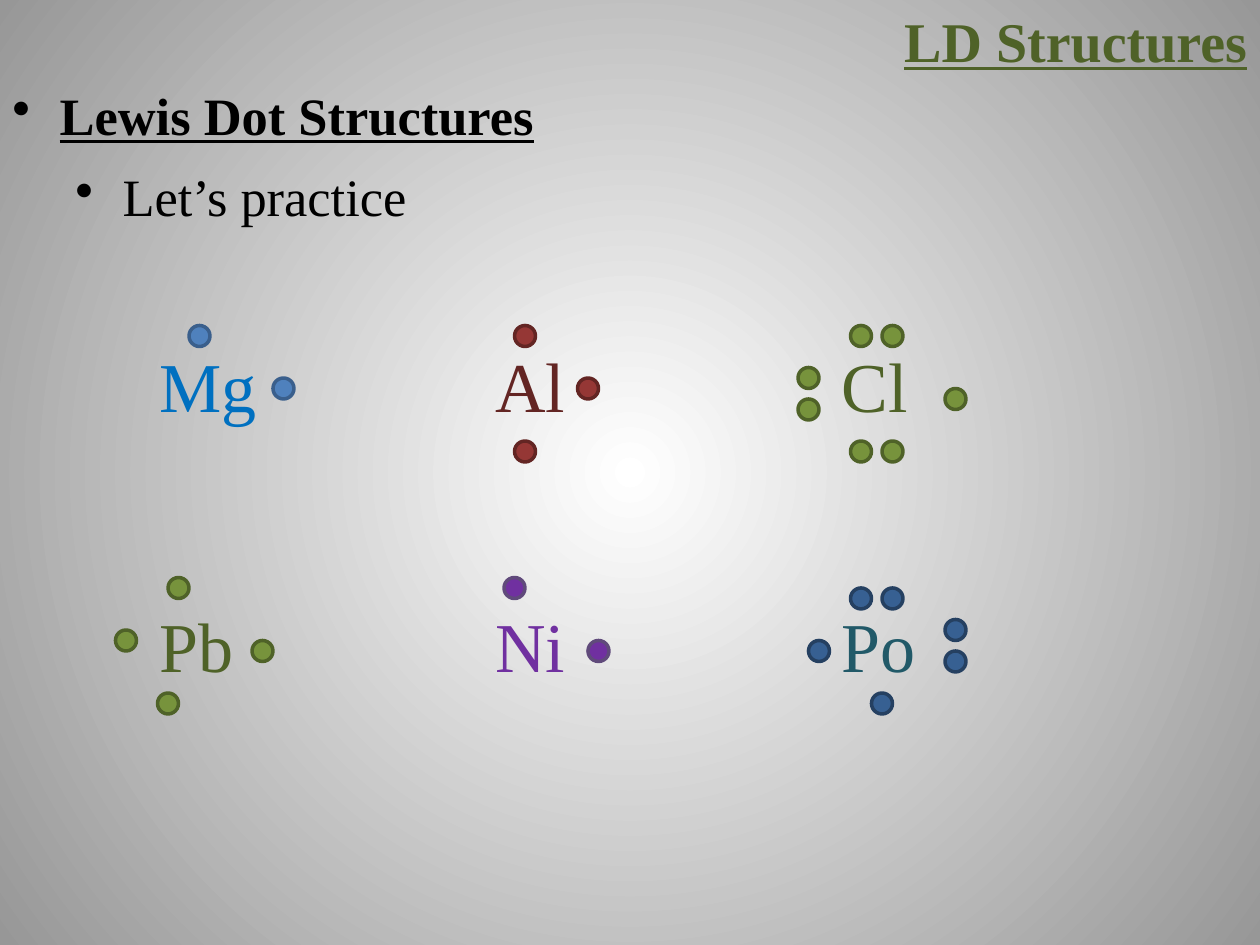
from lxml import etree
from pptx import Presentation
from pptx.dml.color import RGBColor
from pptx.enum.shapes import MSO_SHAPE
from pptx.enum.text import MSO_ANCHOR, MSO_AUTO_SIZE, PP_ALIGN
from pptx.oxml.ns import qn
from pptx.util import Pt

OVAL = MSO_SHAPE.OVAL
TOP = MSO_ANCHOR.TOP
RIGHT = PP_ALIGN.RIGHT
FIT_SHAPE = MSO_AUTO_SIZE.SHAPE_TO_FIT_TEXT

FONT = "Times New Roman"
GREEN = "4F6228"
DOT_SIZE = 12
ROW_1, ROW_2 = 192, 340.5
COLUMN_1, COLUMN_2, COLUMN_3 = 84, 276, 474


def color(hex_string):
    return RGBColor.from_string(hex_string)


def add_run(paragraph, text, size, hex_string, heading=False):
    run = paragraph.add_run()
    run.text = text
    run.font.name = FONT
    run.font.size = Pt(size)
    run.font.bold = heading
    run.font.underline = heading
    run.font.color.rgb = color(hex_string)


presentation = Presentation()
presentation.slide_width = Pt(720)
presentation.slide_height = Pt(540)
slide = presentation.slides.add_slide(presentation.slide_layouts[5])

# Background: circular gradient, white in the centre
background_fill = slide.background.fill
background_fill.gradient()
for stop, stop_color in zip(background_fill.gradient_stops, ("FFFFFF", "979797")):
    stop.color.rgb = color(stop_color)
gradient = slide.element.find(".//" + qn("a:gradFill"))
gradient.remove(gradient.find(qn("a:lin")))
circle = etree.SubElement(gradient, qn("a:path"), {"path": "circle"})
etree.SubElement(circle, qn("a:fillToRect"), {side: "50000" for side in "ltrb"})

# Title
title = slide.shapes.title
title.left, title.top, title.width, title.height = Pt(504), Pt(0), Pt(216), Pt(46)
title.text_frame.vertical_anchor = TOP
title.text_frame.word_wrap = True
title.text_frame.auto_size = FIT_SHAPE
title_paragraph = title.text_frame.paragraphs[0]
title_paragraph.alignment = RIGHT
add_run(title_paragraph, "LD Structures", 32, GREEN, heading=True)

# Bulleted text
bullets = slide.shapes.add_textbox(Pt(0), Pt(48), Pt(720), Pt(87)).text_frame
bullets.word_wrap = True
bullets.auto_size = FIT_SHAPE
bullets.add_paragraph()
lines = ["Lewis Dot Structures", "Let’s practice"]
for level, (paragraph, text) in enumerate(zip(bullets.paragraphs, lines)):
    paragraph.level = level
    paragraph.line_spacing = 0.9
    paragraph.space_before = paragraph.space_after = Pt(7)
    add_run(paragraph, text, 30, "000000", heading=level == 0)
    properties = paragraph._p.get_or_add_pPr()
    properties.set("marL", str(Pt(27 + 36 * level)))
    properties.set("indent", str(Pt(-27)))
    etree.SubElement(properties, qn("a:buChar"), {"char": "•"})

# Symbol, left, top, width, text colour, dot fill, dot line, dot positions
elements = [
    ("Mg", COLUMN_1, ROW_1, 84, "0070C0", "4F81BD", "3A5F8C",
     [(108, 186), (156, 216)]),
    ("Al", COLUMN_2, ROW_1, 84, "632523", "953735", "632523",
     [(294, 186), (330, 216), (294, 252)]),
    ("Cl", COLUMN_3, ROW_1, 54, GREEN, "77933C", GREEN,
     [(486, 186), (504, 186), (540, 222), (486, 252), (504, 252),
      (456, 210), (456, 228)]),
    ("Pb", COLUMN_1, ROW_2, 60, GREEN, "77933C", GREEN,
     [(96, 330), (144, 366), (90, 396), (66, 360)]),
    ("Ni", COLUMN_2, ROW_2, 84, "7030A0", "7030A0", "604A7B",
     [(288, 330), (336, 366)]),
    ("Po", COLUMN_3, ROW_2, 84, "215968", "376092", "254061",
     [(486, 336), (504, 336), (540, 354), (540, 372), (498, 396), (462, 366)]),
]
for symbol, left, top, width, text_color, dot_fill, dot_line, dots in elements:
    label = slide.shapes.add_textbox(Pt(left), Pt(top), Pt(width), Pt(55.5)).text_frame
    label.word_wrap = True
    label.auto_size = FIT_SHAPE
    add_run(label.paragraphs[0], symbol, 40, text_color)
    for dot_left, dot_top in dots:
        dot = slide.shapes.add_shape(
            OVAL, Pt(dot_left), Pt(dot_top), Pt(DOT_SIZE), Pt(DOT_SIZE))
        dot.shadow.inherit = False
        dot.fill.solid()
        dot.fill.fore_color.rgb = color(dot_fill)
        dot.line.color.rgb = color(dot_line)
        dot.line.width = Pt(2)

presentation.save("out.pptx")
